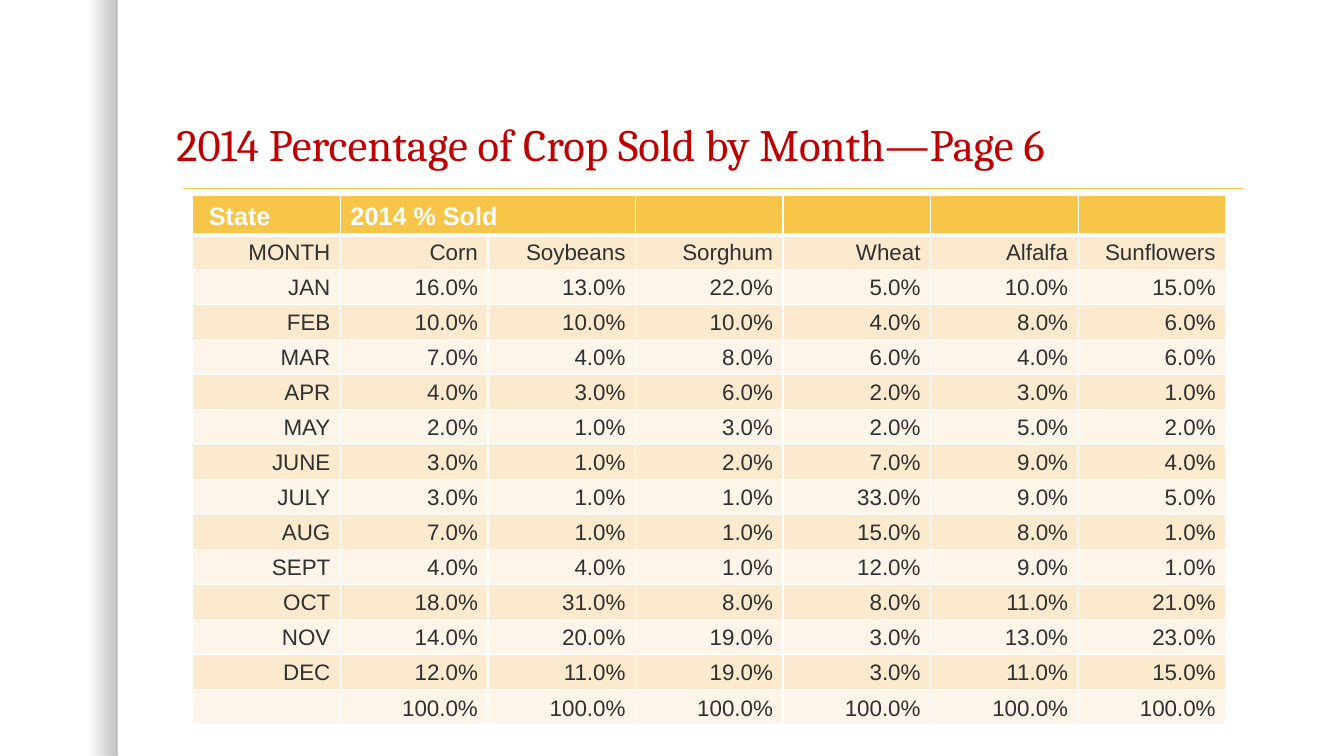
from lxml import etree
from pptx import Presentation
from pptx.dml.color import RGBColor
from pptx.enum import shapes, text
from pptx.oxml import ns
from pptx.util import Pt

# Content
TITLE = "2014 Percentage of Crop Sold by Month—Page 6"
HEADER = ["State", "2014 % Sold", "", "", "", "", ""]
CROPS = ["MONTH", "Corn", "Soybeans", "Sorghum", "Wheat", "Alfalfa", "Sunflowers"]
PERCENT_SOLD = [
    ("JAN", 16, 13, 22, 5, 10, 15),
    ("FEB", 10, 10, 10, 4, 8, 6),
    ("MAR", 7, 4, 8, 6, 4, 6),
    ("APR", 4, 3, 6, 2, 3, 1),
    ("MAY", 2, 1, 3, 2, 5, 2),
    ("JUNE", 3, 1, 2, 7, 9, 4),
    ("JULY", 3, 1, 1, 33, 9, 5),
    ("AUG", 7, 1, 1, 15, 8, 1),
    ("SEPT", 4, 4, 1, 12, 9, 1),
    ("OCT", 18, 31, 8, 8, 11, 21),
    ("NOV", 14, 20, 19, 3, 13, 23),
    ("DEC", 12, 11, 19, 3, 11, 15),
    ("", 100, 100, 100, 100, 100, 100),
]

# Colours and measures in points
BLACK = RGBColor(0x00, 0x00, 0x00)
WHITE = RGBColor(0xFF, 0xFF, 0xFF)
RED = RGBColor(0xC0, 0x00, 0x00)
GOLD = RGBColor(0xF7, 0xC5, 0x47)
DARK = RGBColor(0x30, 0x30, 0x30)
BANDS = [RGBColor(0xFD, 0xF5, 0xE9), RGBColor(0xFC, 0xEA, 0xCF)]
TABLE_LEFT, TABLE_TOP = 137.75, 139.5
COLUMN_WIDTH, HEADER_HEIGHT, ROW_HEIGHT = 105.4, 28.2, 25


def set_borders(cell, top, bottom):
    properties = cell._tc.get_or_add_tcPr()
    widths = {"a:lnL": 1, "a:lnR": 1, "a:lnT": top, "a:lnB": bottom}
    for position, (tag, width) in enumerate(widths.items()):
        line = etree.Element(ns.qn(tag), w=str(Pt(width)))
        fill = etree.SubElement(line, ns.qn("a:solidFill"))
        etree.SubElement(fill, ns.qn("a:srgbClr"), val=str(WHITE))
        properties.insert(position, line)


def fill_cell(cell, words, size, color, bold, alignment):
    cell.vertical_anchor = text.MSO_ANCHOR.BOTTOM
    cell.margin_left = cell.margin_right = Pt(7.2)
    cell.margin_top = cell.margin_bottom = Pt(3)
    paragraph = cell.text_frame.paragraphs[0]
    paragraph.alignment = alignment
    if not words:
        etree.SubElement(paragraph._p, ns.qn("a:endParaRPr"), sz=str(size * 100))
        return
    run = paragraph.add_run()
    run.text = words
    run.font.name = "Arial"
    run.font.size = Pt(size)
    run.font.bold = bold
    run.font.color.rgb = color


presentation = Presentation()
presentation.slide_width, presentation.slide_height = Pt(960), Pt(540)
slide = presentation.slides.add_slide(presentation.slide_layouts[5])
slide.background.fill.solid()
slide.background.fill.fore_color.rgb = WHITE

# Shaded left edge
edge = slide.shapes.add_shape(shapes.MSO_SHAPE.RECTANGLE, 0, 0, Pt(84), Pt(540))
edge.shadow.inherit = False
edge.line.fill.background()
edge.fill.gradient()
edge.fill.gradient_angle = 0
for stop, position, opacity in zip(edge.fill.gradient_stops, (0.75, 1), (0, 25)):
    stop.position = position
    stop.color.rgb = BLACK
    color_element = stop._gs.find(ns.qn("a:srgbClr"))
    etree.SubElement(color_element, ns.qn("a:alpha"), val=str(opacity * 1000))

# Rule under the title
rule = slide.shapes.add_connector(
    shapes.MSO_CONNECTOR.STRAIGHT, Pt(130.5), Pt(134.5), Pt(888), Pt(134.5))
rule.line.color.rgb = GOLD
rule.line.width = Pt(1)
etree.SubElement(rule._element.spPr, ns.qn("a:effectLst"))

# Title
title = slide.shapes.title
title.left, title.top, title.width, title.height = Pt(118.8), Pt(28.8), Pt(775.5), Pt(97.2)
title.text_frame.word_wrap = True
title.text_frame.auto_size = text.MSO_AUTO_SIZE.NONE
title.text_frame.vertical_anchor = text.MSO_ANCHOR.BOTTOM
paragraph = title.text_frame.paragraphs[0]
paragraph.alignment = text.PP_ALIGN.LEFT
paragraph.line_spacing = 0.9
run = paragraph.add_run()
run.text = TITLE
run.font.name = "Cambria"
run.font.size = Pt(32)
run.font.color.rgb = RED

# Table
rows = [HEADER, CROPS]
rows += [[month] + [f"{value}.0%" for value in values] for month, *values in PERCENT_SOLD]
table = slide.shapes.add_table(
    len(rows), len(CROPS), Pt(TABLE_LEFT), Pt(TABLE_TOP), Pt(COLUMN_WIDTH * len(CROPS)),
    Pt(HEADER_HEIGHT + ROW_HEIGHT * (len(rows) - 1))).table
for column in table.columns:
    column.width = Pt(COLUMN_WIDTH)
for row_index, row in enumerate(rows):
    is_header = row_index == 0
    table.rows[row_index].height = Pt(HEADER_HEIGHT if is_header else ROW_HEIGHT)
    for column_index, words in enumerate(row):
        cell = table.cell(row_index, column_index)
        cell.fill.solid()
        cell.fill.fore_color.rgb = GOLD if is_header else BANDS[row_index % 2]
        set_borders(cell, 3 if row_index == 1 else 1, 3 if is_header else 1)
        if is_header:
            fill_cell(cell, words, 18, WHITE, True, text.PP_ALIGN.LEFT)
        else:
            fill_cell(cell, words, 16, DARK, False, text.PP_ALIGN.RIGHT)
table.cell(0, 0).margin_left = Pt(11.5)
table.cell(0, 1).merge(table.cell(0, 2))

presentation.save("out.pptx")
